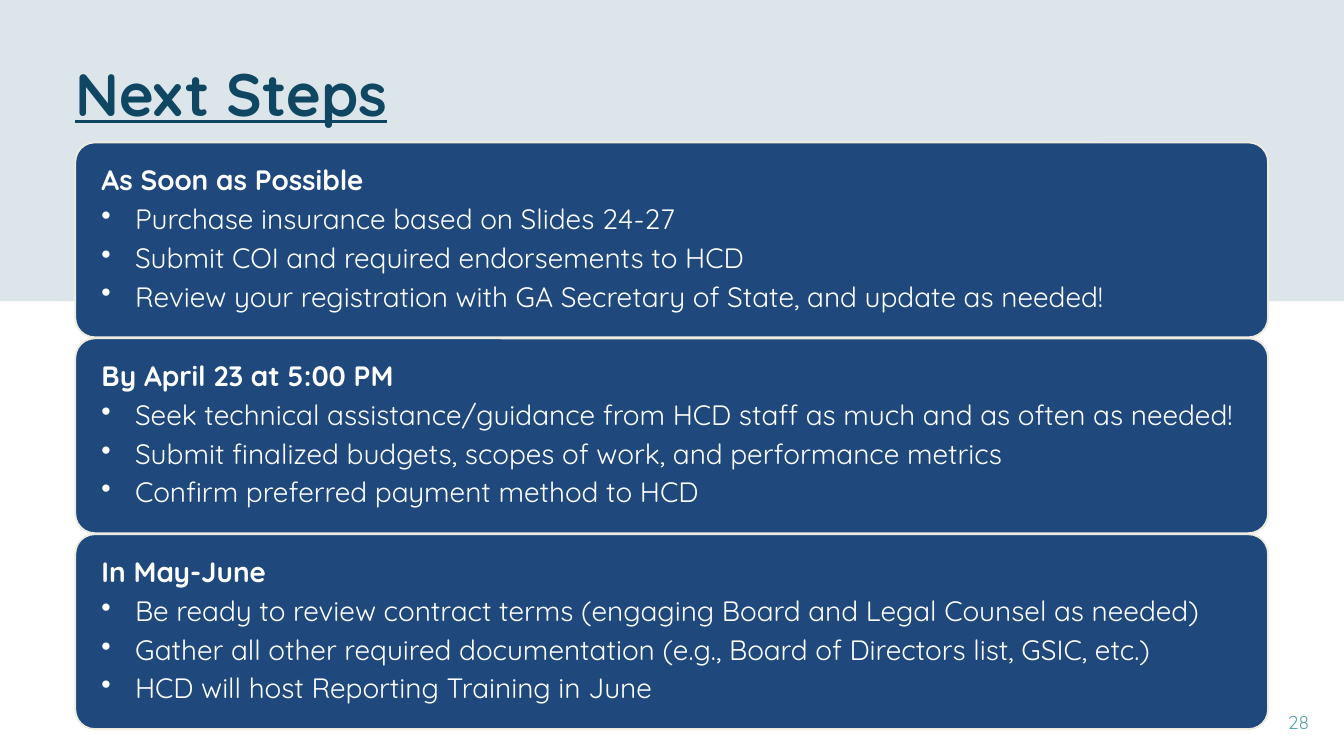
import pptx
import pptx.dml.color
import pptx.enum.shapes
import pptx.enum.text
import pptx.oxml.ns
import pptx.util
from lxml import etree

Inches = pptx.util.Inches
Pt = pptx.util.Pt
SHAPES = pptx.enum.shapes.MSO_SHAPE
ALIGN = pptx.enum.text.PP_ALIGN
ANCHOR = pptx.enum.text.MSO_ANCHOR

NAVY, CREAM, WHITE = "1F497D", "EEECE1", "FFFFFF"
BAND, TITLE, TEAL = "DBE5EA", "0F4662", "5AA2AE"

STEPS = [
    ("As Soon as Possible", [
        "Purchase insurance based on Slides 24-27",
        "Submit COI and required endorsements to HCD",
        "Review your registration with GA Secretary of State, and update as needed!",
    ]),
    ("By April 23 at 5:00 PM", [
        "Seek technical assistance/guidance from HCD staff as much and as often as needed!",
        "Submit finalized budgets, scopes of work, and performance metrics",
        "Confirm preferred payment method to HCD",
    ]),
    ("In May-June", [
        "Be ready to review contract terms (engaging Board and Legal Counsel as needed)",
        "Gather all other required documentation (e.g., Board of Directors list, GSIC, etc.)",
        "HCD will host Reporting Training in June",
    ]),
]


def rgb(value):
    return pptx.dml.color.RGBColor.from_string(value)


def inches(box):
    return [Inches(v) for v in box]


def set_attrs(target, values):
    for name, value in values.items():
        setattr(target, name, value)


def add_run(p, text, size, color, **font):
    r = p.add_run()
    r.text = text
    set_attrs(r.font, {"name": "Quicksand", "size": Pt(size), **font})
    r.font.color.rgb = rgb(color)


def set_frame(tf, anchor, inset_x, inset_y):
    set_attrs(tf, {
        "word_wrap": True,
        "auto_size": pptx.enum.text.MSO_AUTO_SIZE.NONE,
        "vertical_anchor": anchor,
        "margin_left": Inches(inset_x), "margin_right": Inches(inset_x),
        "margin_top": Inches(inset_y), "margin_bottom": Inches(inset_y),
    })


def add_block(s, kind, box, fill, line=None):
    sp = s.shapes.add_shape(kind, *inches(box))
    sp.shadow.inherit = False
    sp.fill.solid()
    sp.fill.fore_color.rgb = rgb(fill)
    if line:
        sp.line.color.rgb = rgb(line)
        sp.line.width = Pt(2)
    else:
        sp.line.fill.background()
    return sp


def set_bullet(p, indent):
    pPr = p._p.get_or_add_pPr()
    pPr.set("marL", str(Inches(indent)))
    pPr.set("indent", str(-Inches(indent)))
    bullet = etree.SubElement(pPr, pptx.oxml.ns.qn("a:buChar"))
    bullet.set("char", "•")


def add_header(s, band_box, title_box):
    band = add_block(s, SHAPES.RECTANGLE, band_box, BAND)
    title = s.shapes.title
    # The title sits in front of the band
    title._element.addprevious(band._element)
    left, top, width, height = inches(title_box)
    set_attrs(title, {"left": left, "top": top, "width": width, "height": height})
    set_frame(title.text_frame, ANCHOR.TOP, 0, 0)
    p = title.text_frame.paragraphs[0]
    set_attrs(p, {"alignment": ALIGN.LEFT, "line_spacing": Pt(89.6)})
    add_run(p, "Next Steps", 64, TITLE, bold=True, underline=True)


def add_step(s, box, heading, items):
    panel = add_block(s, SHAPES.ROUNDED_RECTANGLE, box, NAVY, CREAM)
    panel.adjustments[0] = 0.1
    # Text is inset from the rounded panel
    left, top, width, height = box
    dx, dy = 0.31, 0.09
    text_box = (left + dx, top + dy, width - 2 * dx, height - 2 * dy)
    tf = s.shapes.add_textbox(*inches(text_box)).text_frame
    set_frame(tf, ANCHOR.MIDDLE, 0.08, 0.08)
    for i, text in enumerate([heading, *items]):
        p = tf.add_paragraph() if i else tf.paragraphs[0]
        set_attrs(p, {"alignment": ALIGN.LEFT, "line_spacing": 0.9, "space_after": Pt(9.1)})
        if i:
            set_bullet(p, 0.5)
        add_run(p, text, 30, WHITE, bold=i == 0)


def add_steps(s, box, panel_height):
    left, top, width, height = box
    pitch = (height - panel_height) / (len(STEPS) - 1)
    for i, (heading, items) in enumerate(STEPS):
        add_step(s, (left, top + i * pitch, width, panel_height), heading, items)


def add_page_number(s, box, number):
    tf = s.shapes.add_textbox(*inches(box)).text_frame
    set_frame(tf, ANCHOR.MIDDLE, 0.1, 0.05)
    p = tf.paragraphs[0]
    p.alignment = ALIGN.RIGHT
    add_run(p, number, 20, TEAL)


def main():
    prs = pptx.Presentation()
    set_attrs(prs, {"slide_width": Inches(20), "slide_height": Inches(11.25)})
    s = prs.slides.add_slide(prs.slide_layouts.get_by_name("Title Only"))
    add_header(s, (0, 0, 20, 4.48), (1.12, 0.66, 17.75, 2.42))
    add_steps(s, (1.12, 2.12, 17.75, 8.73), 2.9)
    add_page_number(s, (17.25, 10.54, 2.33, 0.4), "28")
    prs.save("out.pptx")


if __name__ == "__main__":
    main()
